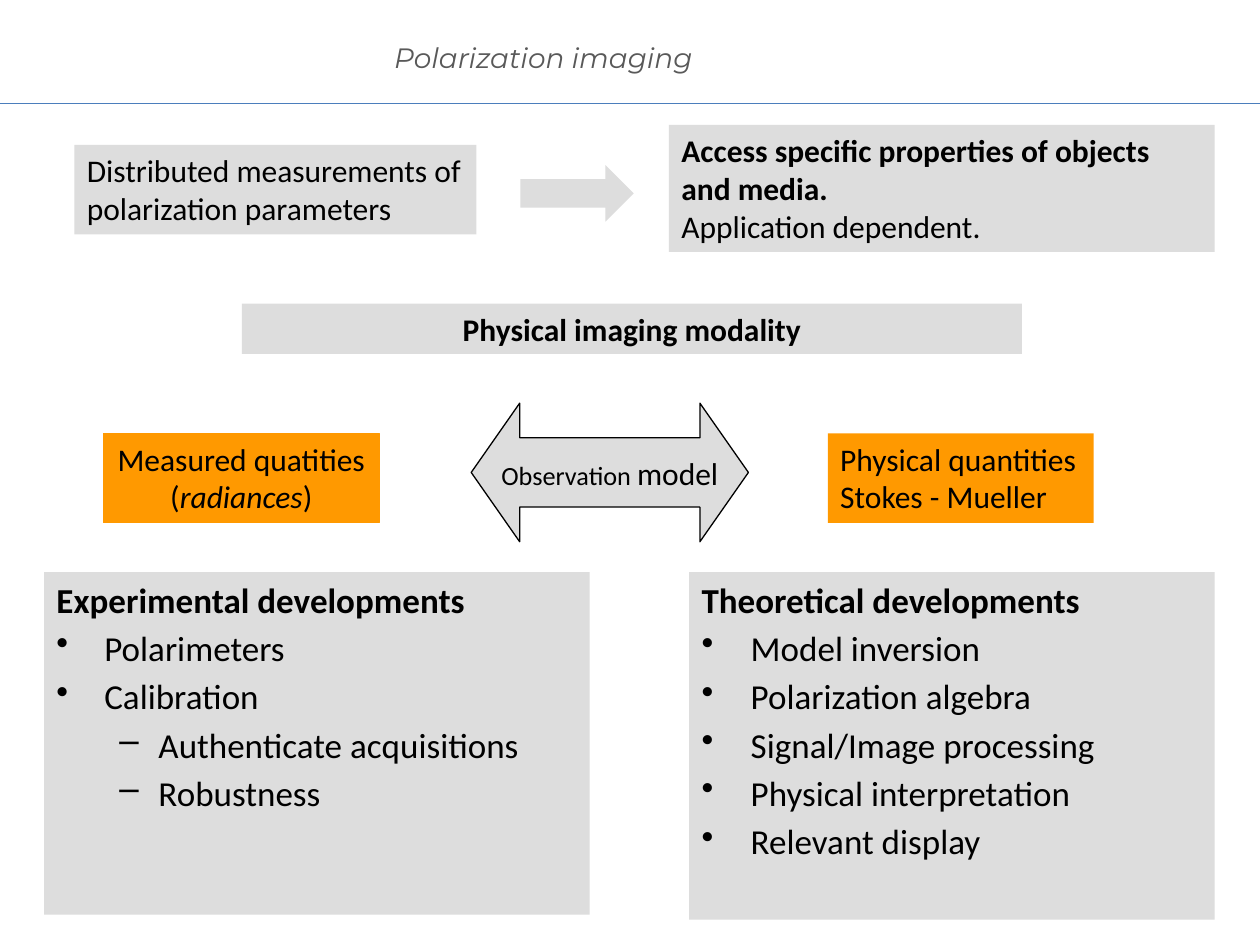
from lxml import etree
from pptx import Presentation
from pptx.dml.color import RGBColor
from pptx.enum.shapes import MSO_CONNECTOR, MSO_SHAPE
from pptx.enum.text import MSO_ANCHOR, MSO_AUTO_SIZE, PP_ALIGN
from pptx.oxml.ns import qn
from pptx.util import Inches, Pt

RECT = MSO_SHAPE.RECTANGLE
RIGHT_ARROW = MSO_SHAPE.RIGHT_ARROW
DOUBLE_ARROW = MSO_SHAPE.LEFT_RIGHT_ARROW
LEFT, CENTER = PP_ALIGN.LEFT, PP_ALIGN.CENTER
TOP, MIDDLE = MSO_ANCHOR.TOP, MSO_ANCHOR.MIDDLE
GROW = MSO_AUTO_SIZE.SHAPE_TO_FIT_TEXT

THEME = {
    "gray": "DDDDDD", "orange": "FF9900", "ink": "000000",
    "title": "595959", "rule": "4B7EBC",
    "font": "Calibri", "title_font": "Montserrat",
    "title_size": 16, "small": 15, "body": 18, "list": 20,
    "line": 0.75, "list_gap": 3.6,
}

# Content: a paragraph is a list of (text, style) runs; "\n" is a line break
BOLD, ITALIC = {"bold": True}, {"italic": True}
TITLE = "Polarization imaging"
LABELS = [
    # position, paragraphs, options
    ((0.59, 1.15, 3.19, 0.71),
     [[("Distributed measurements of polarization parameters", {})]], {}),
    ((5.31, 0.99, 4.33, 1.01),
     [[("Access specific properties of objects and media.", BOLD), ("\n", {}),
       ("Application dependent.", {})]], {}),
    ((1.92, 2.41, 6.19, 0.4),
     [[("Physical imaging modality", BOLD)]], {"align": CENTER}),
    ((0.82, 3.44, 2.19, 0.71),
     [[("Measured quatities", {})],
      [("(", {}), ("radiances", ITALIC), (")", {})]],
     {"fill": "orange", "line": "orange", "align": CENTER, "wrap": False}),
    ((6.57, 3.44, 2.11, 0.71),
     [[("Physical quantities", {})], [("Stokes - Mueller", {})]],
     {"fill": "orange", "wrap": False}),
]
OBSERVATION = [[("Observation ", {"size": THEME["small"]}), ("model", {})]]
DEVELOPMENTS = [
    # position, first-level indent, heading, (level, item) list
    ((0.35, 4.54, 4.33, 2.72), 0.38, "Experimental developments",
     [(0, "Polarimeters"), (0, "Calibration"),
      (1, "Authenticate acquisitions"), (1, "Robustness")]),
    ((5.47, 4.54, 4.17, 2.76), 0.39, "Theoretical developments",
     [(0, "Model inversion"), (0, "Polarization algebra"),
      (0, "Signal/Image processing"), (0, "Physical interpretation"),
      (0, "Relevant display")]),
]
BULLETS = ["•", "–"]
SUB_INDENT = (0.81, 0.31)


def color(name):
    return RGBColor.from_string(THEME[name])


def style_font(font, size, bold=False, italic=False, ink="ink", face="font"):
    font.name, font.size = THEME[face], Pt(size)
    font.bold, font.italic = bold, italic
    font.color.rgb = color(ink)


def add_block(slide, kind, position, fill="gray", line=None):
    block = slide.shapes.add_shape(kind, *map(Inches, position))
    block.shadow.inherit = False
    block.fill.solid()
    block.fill.fore_color.rgb = color(fill)
    if line:
        block.line.color.rgb = color(line)
        block.line.width = Pt(THEME["line"])
    else:
        block.line.fill.background()
    return block


def write_runs(block, paragraphs, align=LEFT, wrap=True, anchor=TOP):
    frame = block.text_frame
    frame.word_wrap, frame.vertical_anchor = wrap, anchor
    for index, runs in enumerate(paragraphs):
        paragraph = frame.add_paragraph() if index else frame.paragraphs[0]
        paragraph.alignment = align
        for text, style in runs:
            if text == "\n":
                paragraph.add_line_break()
                continue
            run = paragraph.add_run()
            run.text = text
            style_font(run.font, **{"size": THEME["body"], **style})


def set_indent(paragraph, left, hanging, bullet=None):
    properties = paragraph._p.get_or_add_pPr()
    properties.set("marL", str(Inches(left)))
    properties.set("indent", str(-Inches(hanging)))
    if bullet:
        etree.SubElement(properties, qn("a:buChar")).set("char", bullet)
    else:
        etree.SubElement(properties, qn("a:buNone"))


def write_list(block, indent, heading, items):
    frame = block.text_frame
    frame.word_wrap, frame.vertical_anchor = True, TOP
    frame.text = "\n".join([heading] + [item for _, item in items])
    levels = [None] + [level for level, _ in items]
    for paragraph, level in zip(frame.paragraphs, levels):
        left, hanging = SUB_INDENT if level else (indent, indent)
        is_heading = level is None
        set_indent(paragraph, left, hanging,
                   None if is_heading else BULLETS[level])
        paragraph.level = level or 0
        paragraph.alignment = LEFT
        if not is_heading:
            paragraph.space_before = Pt(THEME["list_gap"])
        style_font(paragraph.runs[0].font, THEME["list"], bold=is_heading)


def main():
    deck = Presentation()
    deck.slide_width, deck.slide_height = Inches(10), Inches(7.5)
    slide = deck.slides.add_slide(deck.slide_layouts[6])

    # Title and the rule below it
    rule = slide.shapes.add_connector(
        MSO_CONNECTOR.STRAIGHT, 0, Inches(0.82), Inches(10), Inches(0.82))
    rule.line.color.rgb = color("rule")
    rule.line.width = Pt(THEME["line"])
    etree.SubElement(rule._element.spPr, qn("a:effectLst"))

    title = slide.shapes.add_textbox(*map(Inches, (3.03, 0, 3.35, 0.79)))
    title.text_frame.word_wrap = True
    title.text_frame.margin_top = Inches(0.32)
    title.text_frame.text = TITLE
    style_font(title.text_frame.paragraphs[0].runs[0].font,
               THEME["title_size"], italic=True, ink="title", face="title_font")

    # Labels of the measurement chain
    for position, paragraphs, options in LABELS:
        look = {key: options[key] for key in ("fill", "line") if key in options}
        label = add_block(slide, RECT, position, **look)
        write_runs(label, paragraphs, options.get("align", LEFT),
                   options.get("wrap", True))
        label.text_frame.auto_size = GROW

    # Arrows
    add_block(slide, RIGHT_ARROW, (4.13, 1.31, 0.9, 0.45))
    observation = add_block(slide, DOUBLE_ARROW, (3.74, 3.2, 2.2, 1.1), line="ink")
    observation.adjustments[0] = 0.5
    observation.adjustments[1] = 0.35
    write_runs(observation, OBSERVATION, CENTER, wrap=False, anchor=MIDDLE)

    # Development lists
    for position, indent, heading, items in DEVELOPMENTS:
        write_list(add_block(slide, RECT, position), indent, heading, items)

    deck.save("out.pptx")


if __name__ == "__main__":
    main()
